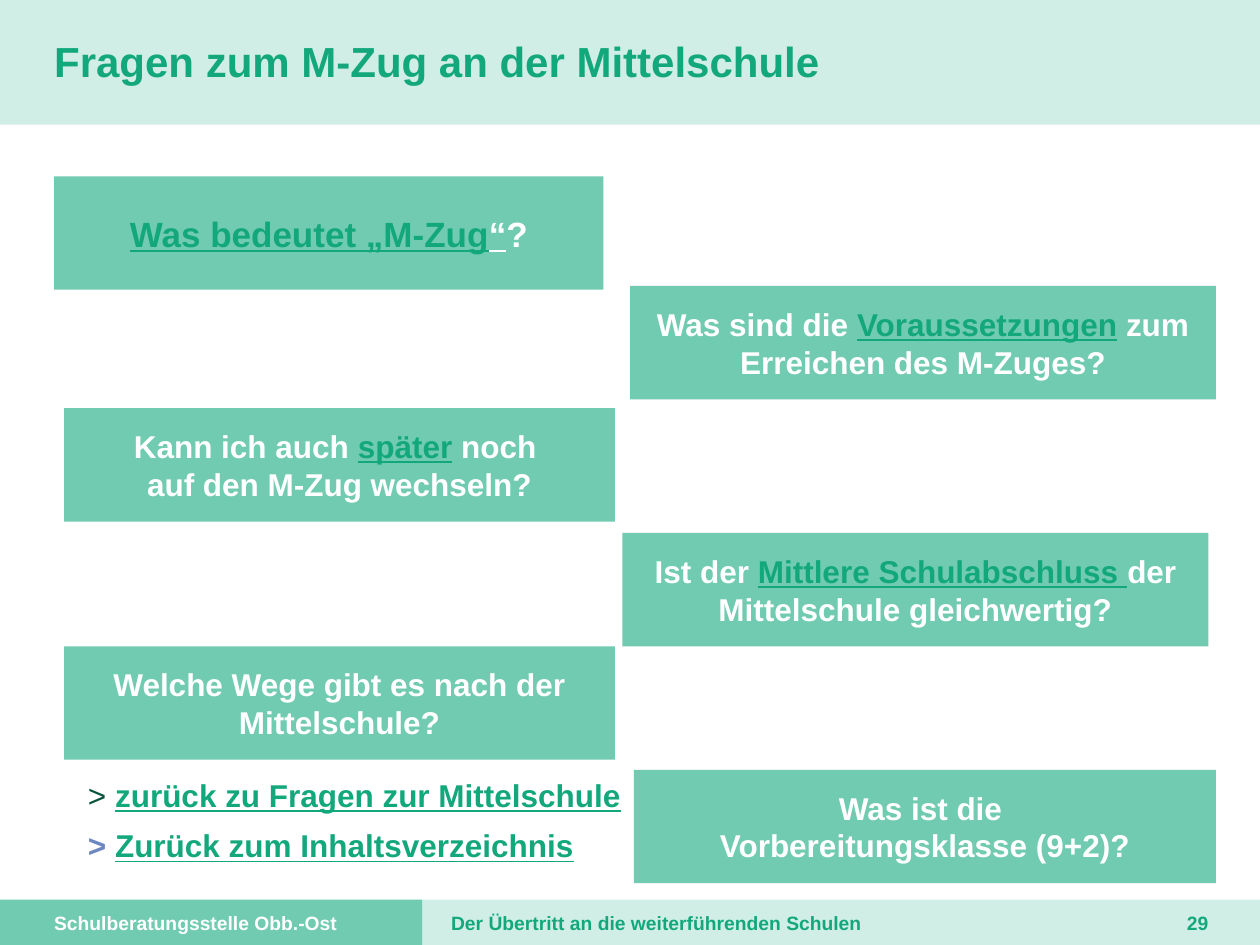
from pptx import Presentation
from pptx.dml.color import RGBColor
from pptx.enum.shapes import MSO_SHAPE
from pptx.enum.text import MSO_ANCHOR, PP_ALIGN
from pptx.util import Inches, Pt

RECTANGLE = MSO_SHAPE.RECTANGLE
MIDDLE = MSO_ANCHOR.MIDDLE
LEFT, CENTER, RIGHT = PP_ALIGN.LEFT, PP_ALIGN.CENTER, PP_ALIGN.RIGHT

PALE = RGBColor(0xD0, 0xEE, 0xE5)
MINT = RGBColor(0x71, 0xCB, 0xB0)
GREEN = RGBColor(0x13, 0xA8, 0x7C)
DARK_GREEN = RGBColor(0x0A, 0x54, 0x3E)
BLUE = RGBColor(0x6D, 0x87, 0xC1)
WHITE = RGBColor(0xFF, 0xFF, 0xFF)

PLAIN = {"color": WHITE}
LINK = {"color": GREEN, "underline": True}
HEADING = {"color": GREEN, "size": 24}
FOOTER = {"color": GREEN, "size": 11}
DEFAULTS = {"name": "Arial", "size": 18, "bold": True}

QUESTIONS = [
    ((0.43, 1.4, 4.36, 0.9), [[
        ("Was bedeutet „M-Zug", {**LINK, "size": 20}),
        ("“", {"color": WHITE, "underline": True, "size": 20}),
        ("?", {"color": WHITE, "size": 20})]]),
    ((5, 2.27, 4.65, 0.9), [[
        ("Was sind die ", PLAIN), ("Voraussetzungen", LINK),
        (" zum Erreichen des M-Zuges?", PLAIN)]]),
    ((0.51, 3.24, 4.37, 0.9), [
        [("Kann ich auch ", PLAIN), ("später", LINK), (" noch ", PLAIN)],
        [("auf den M-Zug wechseln?", PLAIN)]]),
    ((4.94, 4.23, 4.65, 0.9), [[
        ("Ist der ", PLAIN), ("Mittlere Schulabschluss ", LINK),
        ("der Mittelschule gleichwertig?", PLAIN)]]),
    ((0.51, 5.13, 4.37, 0.9), [[
        ("Welche Wege gibt es nach der Mittelschule?", PLAIN)]]),
    ((5.03, 6.11, 4.62, 0.9), [[
        ("Was ist die ", PLAIN), ("\n", PLAIN),
        ("Vorbereitungsklasse (9+2)?", PLAIN)]]),
]

BACK_LINKS = [
    ("zurück zu Fragen zur Mittelschule", {"color": DARK_GREEN, "bold": False}),
    ("Zurück zum Inhaltsverzeichnis", {"color": BLUE}),
]


def write_text(frame, paragraphs, alignment):
    for index, spans in enumerate(paragraphs):
        para = frame.add_paragraph() if index else frame.paragraphs[0]
        para.alignment = alignment
        for text, style in spans:
            if text == "\n":
                para.add_line_break()
                continue
            span = para.add_run()
            span.text = text
            values = {**DEFAULTS, **style}
            span.font.color.rgb = values.pop("color")
            values["size"] = Pt(values["size"])
            for key, value in values.items():
                setattr(span.font, key, value)


def set_frame(frame, inset):
    values = {"word_wrap": True, "vertical_anchor": MIDDLE}
    for side in ("left", "top", "right", "bottom"):
        values["margin_" + side] = Inches(inset)
    for key, value in values.items():
        setattr(frame, key, value)


def add_panel(page, box, color):
    panel = page.shapes.add_shape(RECTANGLE, *map(Inches, box))
    panel.shadow.inherit = False
    panel.fill.solid()
    panel.fill.fore_color.rgb = color
    panel.line.fill.background()
    return panel


def add_label(page, box, text, style, alignment=LEFT):
    frame = page.shapes.add_textbox(*map(Inches, box)).text_frame
    set_frame(frame, 0)
    write_text(frame, [[(text, style)]], alignment)


def add_header(page, box):
    left, top, width, height = box
    add_panel(page, box, PALE)
    add_label(page, (left + 0.43, top + 0.15, 7.5, 0.71),
              "Fragen zum M-Zug an der Mittelschule", HEADING)


def add_footer(page, box):
    left, top, width, height = box
    split = 3.35
    add_panel(page, (left + split, top, width - split, height), PALE)
    add_panel(page, (left, top, split, height), MINT)
    text_top = top + 0.09
    add_label(page, (left + 0.43, text_top, 2.74, 0.19),
              "Schulberatungsstelle Obb.-Ost", {**FOOTER, "color": WHITE})
    add_label(page, (left + 3.58, text_top, 5.28, 0.19),
              "Der Übertritt an die weiterführenden Schulen", FOOTER)
    add_label(page, (left + 8.86, text_top, 0.73, 0.19), "29", FOOTER, RIGHT)


def add_question(page, box, paragraphs):
    frame = add_panel(page, box, MINT).text_frame
    set_frame(frame, 0.08)
    write_text(frame, paragraphs, CENTER)


def add_back_links(page, box):
    left, top, width, height = box
    row_height = height / len(BACK_LINKS)
    for index, (text, marker) in enumerate(BACK_LINKS):
        row = (left, top + index * row_height, width, row_height)
        frame = page.shapes.add_textbox(*map(Inches, row)).text_frame
        frame.word_wrap = False
        write_text(frame, [[("> ", marker), (text, LINK)]], LEFT)


def main():
    deck = Presentation()
    deck.slide_width, deck.slide_height = Inches(10), Inches(7.5)
    page = deck.slides.add_slide(deck.slide_layouts[6])
    add_header(page, (0, -0.02, 10, 1.01))
    add_footer(page, (0, 7.14, 10, 0.36))
    for box, paragraphs in QUESTIONS:
        add_question(page, box, paragraphs)
    add_back_links(page, (0.6, 6.11, 4.47, 0.8))
    deck.save("out.pptx")


if __name__ == "__main__":
    main()
